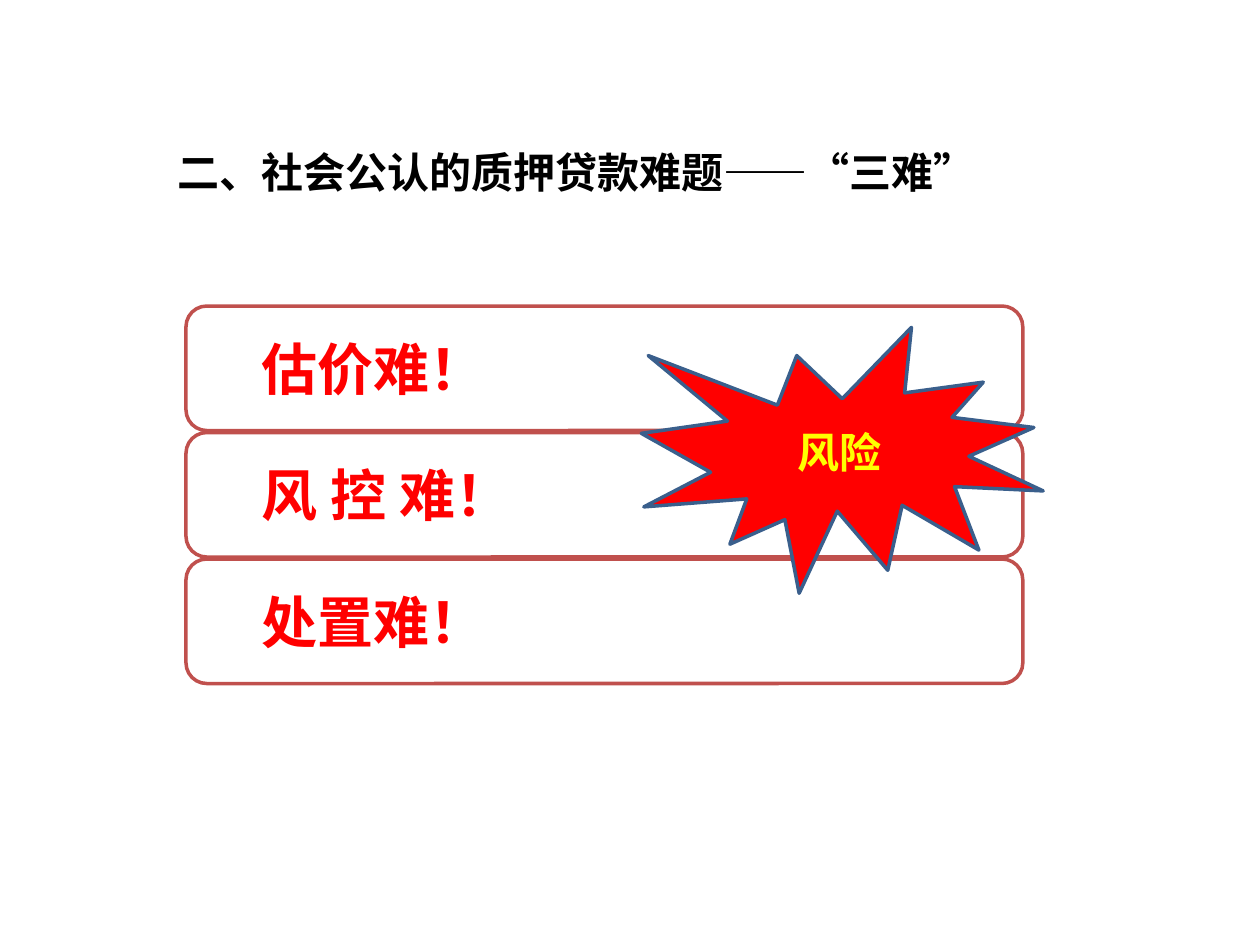
import pptx
import pptx.dml.color
import pptx.enum.shapes
import pptx.enum.text
import pptx.oxml.ns
import pptx.util
from lxml import etree
from pptx.util import Cm, Pt

RGBColor = pptx.dml.color.RGBColor
MSO_SHAPE = pptx.enum.shapes.MSO_SHAPE
PP_ALIGN = pptx.enum.text.PP_ALIGN
MSO_ANCHOR = pptx.enum.text.MSO_ANCHOR

BLACK = RGBColor(0x00, 0x00, 0x00)
RED = RGBColor(0xFF, 0x00, 0x00)
YELLOW = RGBColor(0xFF, 0xFF, 0x00)
BRICK = RGBColor(0xC0, 0x50, 0x4D)
BLUE = RGBColor(0x3A, 0x5F, 0x8C)

CJK_FONT = "Noto Sans CJK SC"
LATIN_FONT = "Calibri"

TITLE = "二、社会公认的质押贷款难题——“三难”"
DIFFICULTIES = ["估价难！", "风 控 难！", "处置难！"]
BURST = "风险"

ROW_LEFT, ROW_TOP = Cm(3.75), Cm(6.17)
ROW_WIDTH, ROW_HEIGHT, ROW_PITCH = Cm(16.87), Cm(2.51), Cm(2.55)
LABEL_LEFT, LABEL_WIDTH, LABEL_HEIGHT = Cm(5.03), Cm(5.74), Cm(1.63)


def write(shape, text, size, color, font, align, anchor):
    frame = shape.text_frame
    frame.text = text
    frame.word_wrap = True
    frame.auto_size = pptx.enum.text.MSO_AUTO_SIZE.NONE
    frame.vertical_anchor = anchor
    paragraph = frame.paragraphs[0]
    paragraph.alignment = align
    paragraph.font.size = Pt(size)
    paragraph.font.bold = True
    paragraph.font.color.rgb = color
    paragraph.font.name = font
    # Chinese characters take their typeface from a:ea
    properties = paragraph.runs[0].font
    properties.name = font
    east_asian = etree.SubElement(properties._element, pptx.oxml.ns.qn("a:ea"))
    east_asian.set("typeface", CJK_FONT)


def add_outlined(slide, kind, left, top, width, height, line_color):
    shape = slide.shapes.add_shape(kind, left, top, width, height)
    shape.shadow.inherit = False
    shape.fill.background()
    shape.line.color.rgb = line_color
    shape.line.width = Pt(2)
    return shape


def main():
    presentation = pptx.Presentation()
    presentation.slide_width, presentation.slide_height = Cm(25.4), Cm(19.05)
    slide = presentation.slides.add_slide(presentation.slide_layouts[5])

    title = slide.shapes.title
    title.left, title.top = Cm(3.33), Cm(2.82)
    title.width, title.height = Cm(17.68), Cm(1.27)
    write(title, TITLE, 24, BLACK, CJK_FONT, PP_ALIGN.LEFT, MSO_ANCHOR.TOP)

    for index, difficulty in enumerate(DIFFICULTIES):
        top = ROW_TOP + index * ROW_PITCH
        add_outlined(slide, MSO_SHAPE.ROUNDED_RECTANGLE,
                     ROW_LEFT, top, ROW_WIDTH, ROW_HEIGHT, BRICK)
        label_top = top + (ROW_HEIGHT - LABEL_HEIGHT) // 2
        label = slide.shapes.add_textbox(LABEL_LEFT, label_top, LABEL_WIDTH, LABEL_HEIGHT)
        write(label, difficulty, 32, RED, LATIN_FONT, PP_ALIGN.LEFT, MSO_ANCHOR.TOP)

    burst = add_outlined(slide, MSO_SHAPE.EXPLOSION1,
                         Cm(12.93), Cm(6.6), Cm(8.1), Cm(5.36), BLUE)
    burst.fill.solid()
    burst.fill.fore_color.rgb = RED
    write(burst, BURST, 24, YELLOW, CJK_FONT, PP_ALIGN.CENTER, MSO_ANCHOR.MIDDLE)

    presentation.save("out.pptx")


if __name__ == "__main__":
    main()
